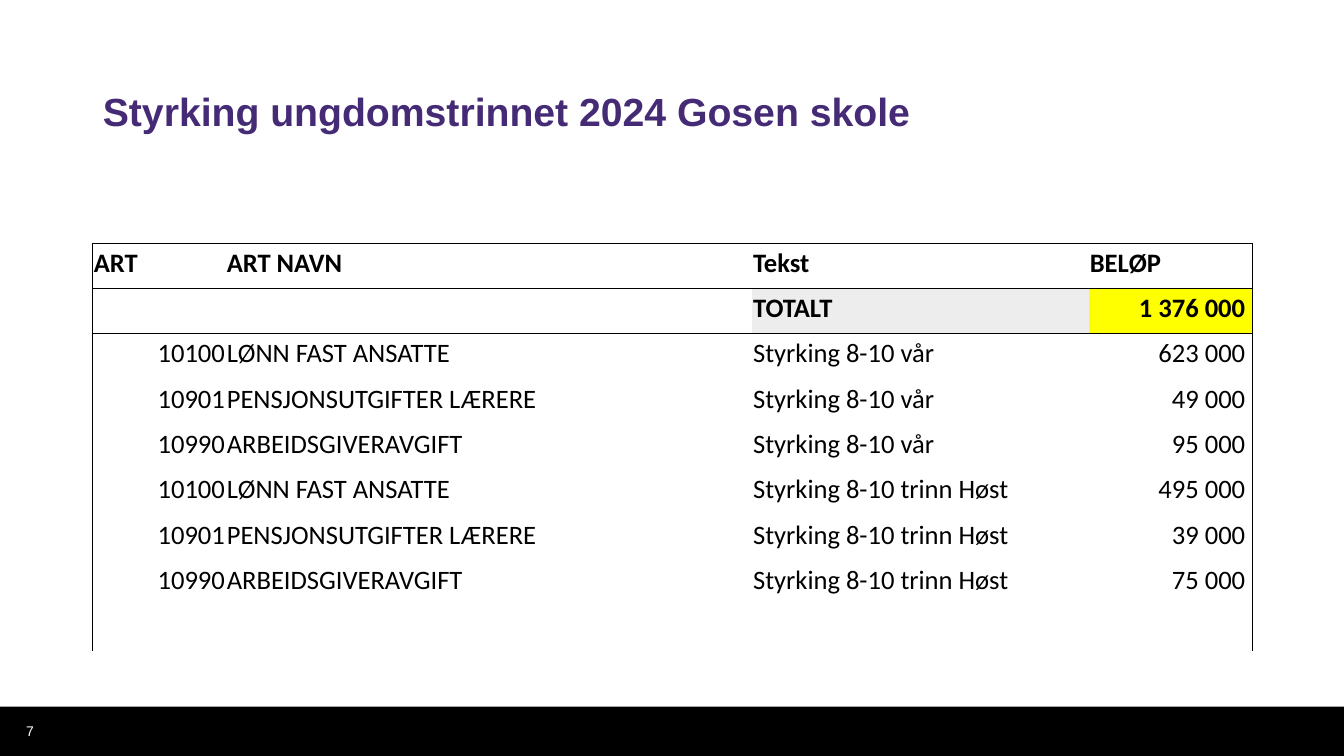
from lxml.etree import SubElement
from pptx import Presentation
from pptx.dml.color import RGBColor
from pptx.enum.shapes import MSO_SHAPE
from pptx.enum.text import MSO_ANCHOR, PP_ALIGN
from pptx.oxml.ns import qn
from pptx.util import Inches, Pt

COLORS = {
    "title": "452B75",
    "ink": "000000",
    "paper": "FFFFFF",
    "total_label": "EDEDED",
    "total_amount": "FFFF00",
}
COLUMN_WIDTHS = [1.32, 5.22, 3.34, 1.62]
SPRING, AUTUMN = "Styrking 8-10 vår", "Styrking 8-10 trinn Høst"
BUDGET = [
    ["ART", "ART NAVN", "Tekst", "BELØP"],
    ["", "", "TOTALT", "1 376 000 "],
    ["10100", "LØNN FAST ANSATTE", SPRING, "623 000 "],
    ["10901", "PENSJONSUTGIFTER LÆRERE", SPRING, "49 000 "],
    ["10990", "ARBEIDSGIVERAVGIFT", SPRING, "95 000 "],
    ["10100", "LØNN FAST ANSATTE", AUTUMN, "495 000 "],
    ["10901", "PENSJONSUTGIFTER LÆRERE", AUTUMN, "39 000 "],
    ["10990", "ARBEIDSGIVERAVGIFT", AUTUMN, "75 000 "],
    ["", "", "", ""],
]
HEADER_ROW, TOTAL_ROW = 0, 1
AMOUNT_COLUMN = len(COLUMN_WIDTHS) - 1
CELL_FILLS = {(TOTAL_ROW, 2): "total_label", (TOTAL_ROW, 3): "total_amount"}


def color(name):
    return RGBColor.from_string(COLORS[name])


def add_text(paragraph, text, font_name, size, color_name, bold=False):
    run = paragraph.add_run()
    run.text = text
    run.font.name = font_name
    run.font.size = Pt(size)
    run.font.bold = bold
    run.font.color.rgb = color(color_name)


def place_title(slide, left, top, width, height):
    title = slide.shapes.title
    title.left, title.top = Inches(left), Inches(top)
    title.width, title.height = Inches(width), Inches(height)
    title.text_frame.vertical_anchor = MSO_ANCHOR.MIDDLE
    heading = title.text_frame.paragraphs[0]
    heading.alignment = PP_ALIGN.LEFT
    heading.line_spacing = 0.9
    add_text(heading, "Styrking ungdomstrinnet 2024 Gosen skole", "Arial", 28, "title", True)


def add_footer(slide, left, top, width, height):
    # Black band
    band = slide.shapes.add_shape(
        MSO_SHAPE.RECTANGLE, Inches(left), Inches(top), Inches(width), Inches(height))
    band.shadow.inherit = False
    band.fill.solid()
    band.fill.fore_color.rgb = color("ink")
    band.line.fill.background()

    # Page number
    page_number = slide.shapes.add_textbox(
        Inches(left + 0.16), Inches(top + 0.04), Inches(0.52), Inches(0.4))
    page_number.text_frame.word_wrap = True
    page_number.text_frame.vertical_anchor = MSO_ANCHOR.MIDDLE
    add_text(page_number.text_frame.paragraphs[0], "7", "Arial", 10, "paper")


def set_borders(cell, drawn_sides):
    properties = cell._tc.get_or_add_tcPr()
    for side in "LRTB":
        border = SubElement(properties, qn(f"a:ln{side}"), w=str(Pt(0.5)))
        if side in drawn_sides:
            fill = SubElement(border, qn("a:solidFill"))
            SubElement(fill, qn("a:srgbClr"), val=COLORS["ink"])
        else:
            SubElement(border, qn("a:noFill"))


def border_sides(row, column):
    sides = ""
    if column == 0:
        sides += "L"
    if column == AMOUNT_COLUMN:
        sides += "R"
    if row <= TOTAL_ROW + 1:
        sides += "T"
    if row <= TOTAL_ROW:
        sides += "B"
    return sides


def fill_cell(cell, row, column, text):
    cell.vertical_anchor = MSO_ANCHOR.BOTTOM
    cell.margin_left = cell.margin_top = cell.margin_right = Inches(0.01)
    cell.margin_bottom = Inches(0.09)
    set_borders(cell, border_sides(row, column))
    if (row, column) in CELL_FILLS:
        cell.fill.solid()
        cell.fill.fore_color.rgb = color(CELL_FILLS[row, column])
    else:
        cell.fill.background()
    if text:
        entry = cell.text_frame.paragraphs[0]
        if row != HEADER_ROW and column in (0, AMOUNT_COLUMN):
            entry.alignment = PP_ALIGN.RIGHT
        add_text(entry, text, "Calibri", 19, "ink", row <= TOTAL_ROW)


def add_budget_table(slide, left, top, width, height):
    budget = slide.shapes.add_table(
        len(BUDGET), len(COLUMN_WIDTHS),
        Inches(left), Inches(top), Inches(width), Inches(height)).table
    budget.first_row = False
    budget.horz_banding = False
    for column, share in zip(budget.columns, COLUMN_WIDTHS):
        column.width = Inches(width * share / sum(COLUMN_WIDTHS))
    for row, entries in enumerate(BUDGET):
        for column, text in enumerate(entries):
            fill_cell(budget.cell(row, column), row, column, text)


def main():
    presentation = Presentation()
    presentation.slide_width = Inches(13.33)
    presentation.slide_height = Inches(7.5)
    slide = presentation.slides.add_slide(presentation.slide_layouts[5])
    add_footer(slide, 0, 7.01, 13.33, 0.49)
    place_title(slide, 0.92, 0.4, 11.5, 1.45)
    add_budget_table(slide, 0.92, 2.41, 11.5, 4.05)
    presentation.save("out.pptx")


if __name__ == "__main__":
    main()
